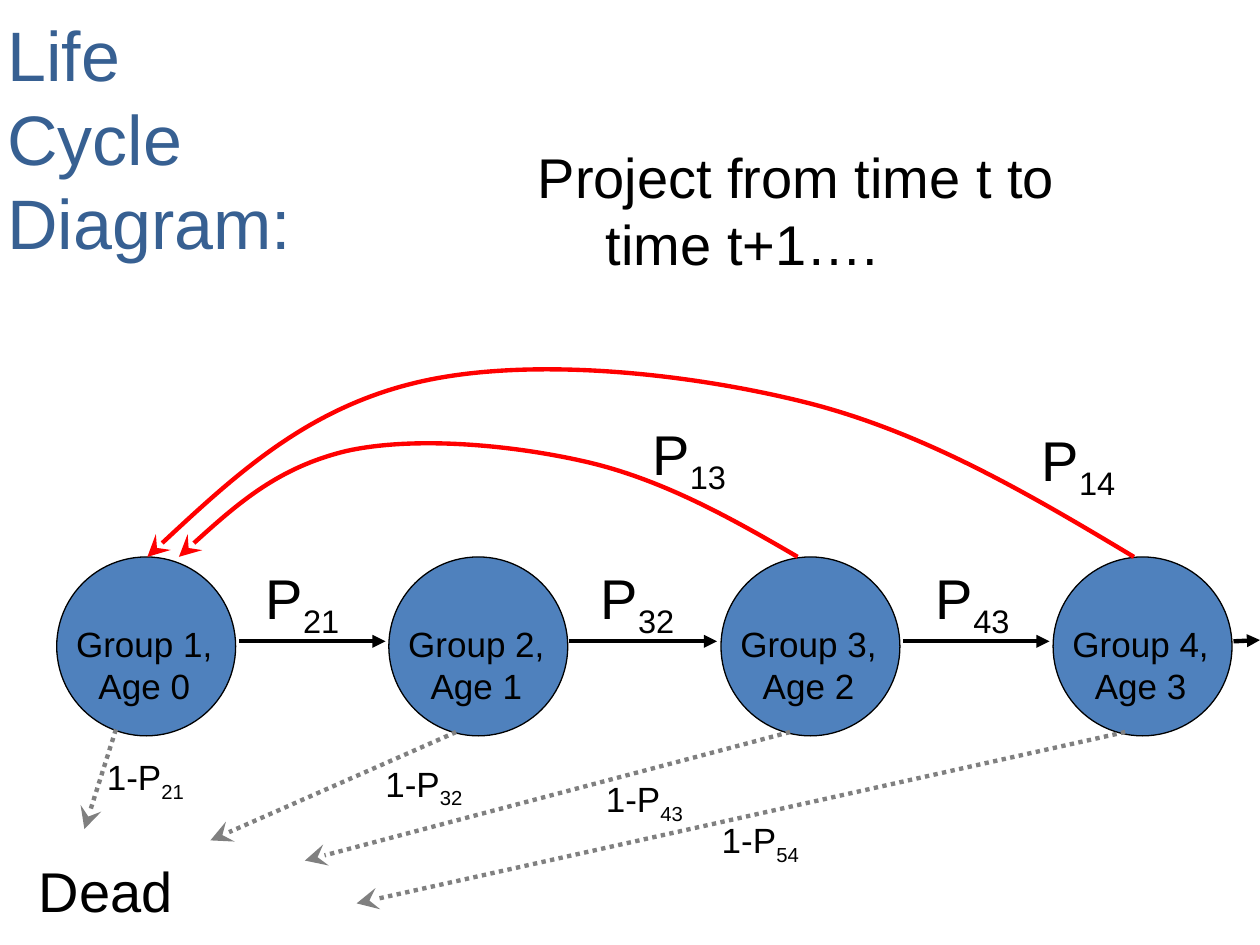
"""Build a life cycle diagram slide with survival, birth and death transitions."""
from lxml import etree
from pptx import Presentation
from pptx.dml.color import RGBColor
from pptx.enum.dml import MSO_LINE
from pptx.enum.shapes import MSO_CONNECTOR, MSO_SHAPE
from pptx.enum.text import MSO_AUTO_SIZE, PP_ALIGN
from pptx.oxml.ns import qn
from pptx.util import Inches, Pt

STRAIGHT = MSO_CONNECTOR.STRAIGHT
OVAL = MSO_SHAPE.OVAL
DOTTED = MSO_LINE.ROUND_DOT
GROW = MSO_AUTO_SIZE.SHAPE_TO_FIT_TEXT
CENTER = PP_ALIGN.CENTER

BLACK, RED, GRAY = "000000", "FF0000", "808080"
BLUE, TITLE_BLUE = "4F81BD", "376092"
FONT = "Arial"
INDENT = 0.54
CIRCLE, FIRST_X, STEP, TOP = 1.42, 0.45, 2.636, 4.42

TITLE = ["Life Cycle", "Diagram:"]
PROJECTION = "Project from time t to time t+1…."
GROUPS = ["Group 1, Age 0", "Group 2, Age 1", "Group 3, Age 2", "Group 4, Age 3"]
SURVIVAL = [
    ((1.9, 5.09), (3.06, 5.09)),
    ((4.52, 5.09), (5.69, 5.09)),
    ((7.17, 5.09), (8.33, 5.09)),
    ((9.79, 5.09), (10, 5.08)),
]
DEATHS = [
    ((0.92, 5.79), (0.67, 6.58)),
    ((3.62, 5.81), (1.67, 6.67)),
    ((6.27, 5.81), (2.42, 6.83)),
    ((8.93, 5.81), (2.83, 7.17)),
]
BIRTHS = [
    [(6.33, 4.42), (5.8, 4.11), (5.26, 3.81), (4.67, 3.67), (4.07, 3.53),
     (3.29, 3.46), (2.75, 3.58), (2.21, 3.71), (1.81, 4.06), (1.42, 4.42)],
    [(9, 4.42), (8.15, 3.91), (7.3, 3.41), (6.34, 3.18), (5.39, 2.95),
     (4.15, 2.83), (3.29, 3.04), (2.43, 3.25), (1.8, 3.83), (1.17, 4.42)],
]
RATES = [
    ("P", "21", 2.01, 4.42),
    ("P", "32", 4.67, 4.42),
    ("P", "43", 7.33, 4.42),
    ("P", "13", 5.08, 3.28),
    ("P", "14", 8.17, 3.33),
]
DEATH_RATES = [
    ("1-P", "21", 0.75, 5.95),
    ("1-P", "32", 2.96, 6),
    ("1-P", "43", 4.71, 6.12),
    ("1-P", "54", 5.63, 6.45),
]


def rgb(value):
    return RGBColor.from_string(value)


def add_text(shapes, box, paragraphs, size, color=BLACK, wrap=True, align=None, indent=0):
    sp = shapes.add_textbox(*map(Inches, box))
    tf = sp.text_frame
    tf.word_wrap = wrap
    tf.auto_size = GROW
    for i, runs in enumerate(paragraphs):
        p = tf.paragraphs[0] if i == 0 else tf.add_paragraph()
        p.alignment = align
        if indent:
            pPr = p._p.get_or_add_pPr()
            pPr.set("marL", str(Inches(indent)))
            pPr.set("indent", str(-Inches(indent)))
        for text, baseline in runs:
            r = p.add_run()
            r.text = text
            r.font.size = Pt(size)
            r.font.name = FONT
            r.font.color.rgb = rgb(color)
            if baseline:
                r.font._element.set("baseline", str(baseline * 1000))


def style_line(sp, color, head, size, dash=None):
    line = sp.line
    line.color.rgb = rgb(color)
    line.width = Pt(2.5)
    if dash:
        line.dash_style = dash
    etree.SubElement(line._get_or_add_ln(), qn("a:tailEnd"), type=head, w=size, len=size)


def add_arrow(shapes, start, end, *style):
    sp = shapes.add_connector(STRAIGHT, *map(Inches, start + end))
    style_line(sp, *style)
    etree.SubElement(sp._element.spPr, qn("a:effectLst"))


def add_curve(shapes, points):
    start, *rest = [(Inches(x), Inches(y)) for x, y in points]
    builder = shapes.build_freeform(*start)
    builder.add_line_segments(rest, close=False)
    sp = builder.convert_to_shape()
    path = next(sp._element.iter(qn("a:path")))
    segments = path.findall(qn("a:lnTo"))
    for i in range(0, len(segments), 3):
        curve = etree.SubElement(path, qn("a:cubicBezTo"))
        for segment in segments[i:i + 3]:
            curve.append(segment[0])
            path.remove(segment)
    sp.fill.background()
    sp.shadow.inherit = False
    style_line(sp, RED, "stealth", "lg")


def add_stage(shapes, x, label):
    group = shapes.add_group_shape()
    sp = group.shapes.add_shape(OVAL, *map(Inches, (x, TOP, CIRCLE, CIRCLE)))
    sp.shadow.inherit = False
    sp.fill.solid()
    sp.fill.fore_color.rgb = rgb(BLUE)
    sp.line.color.rgb = rgb(BLACK)
    sp.line.width = Pt(0.75)
    box = (x - 0.03, TOP + 0.47, 1.45, 0.77)
    add_text(group.shapes, box, [[(label, 0)]], 20, align=CENTER)


def main():
    prs = Presentation()
    prs.slide_width, prs.slide_height = Inches(10), Inches(7.5)
    shapes = prs.slides.add_slide(prs.slide_layouts[6]).shapes

    add_text(shapes, (4.17, 1.08, 5.17, 1.18), [[(PROJECTION, 0)]], 32, indent=INDENT)
    for i, label in enumerate(GROUPS):
        add_stage(shapes, FIRST_X + i * STEP, label)
    for start, end in SURVIVAL:
        add_arrow(shapes, start, end, BLACK, "triangle", "med")
    for points in BIRTHS:
        add_curve(shapes, points)
    for start, end in DEATHS:
        add_arrow(shapes, start, end, GRAY, "stealth", "lg", DOTTED)

    add_text(shapes, (0.21, 6.75, 1.29, 0.64), [[("Dead", 0)]], 32, wrap=False, indent=INDENT)
    for rates, size, width, height in ((RATES, 32, 0.79, 0.64), (DEATH_RATES, 20, 0.84, 0.44)):
        for symbol, index, x, y in rates:
            runs = [(symbol, 0), (index, -25)]
            add_text(shapes, (x, y, width, height), [runs], size, wrap=False, indent=INDENT)
    add_text(shapes, (-0.04, 0.04, 2.6, 1.45), [[(line, 0)] for line in TITLE], 40, TITLE_BLUE)

    prs.save("out.pptx")


if __name__ == "__main__":
    main()
